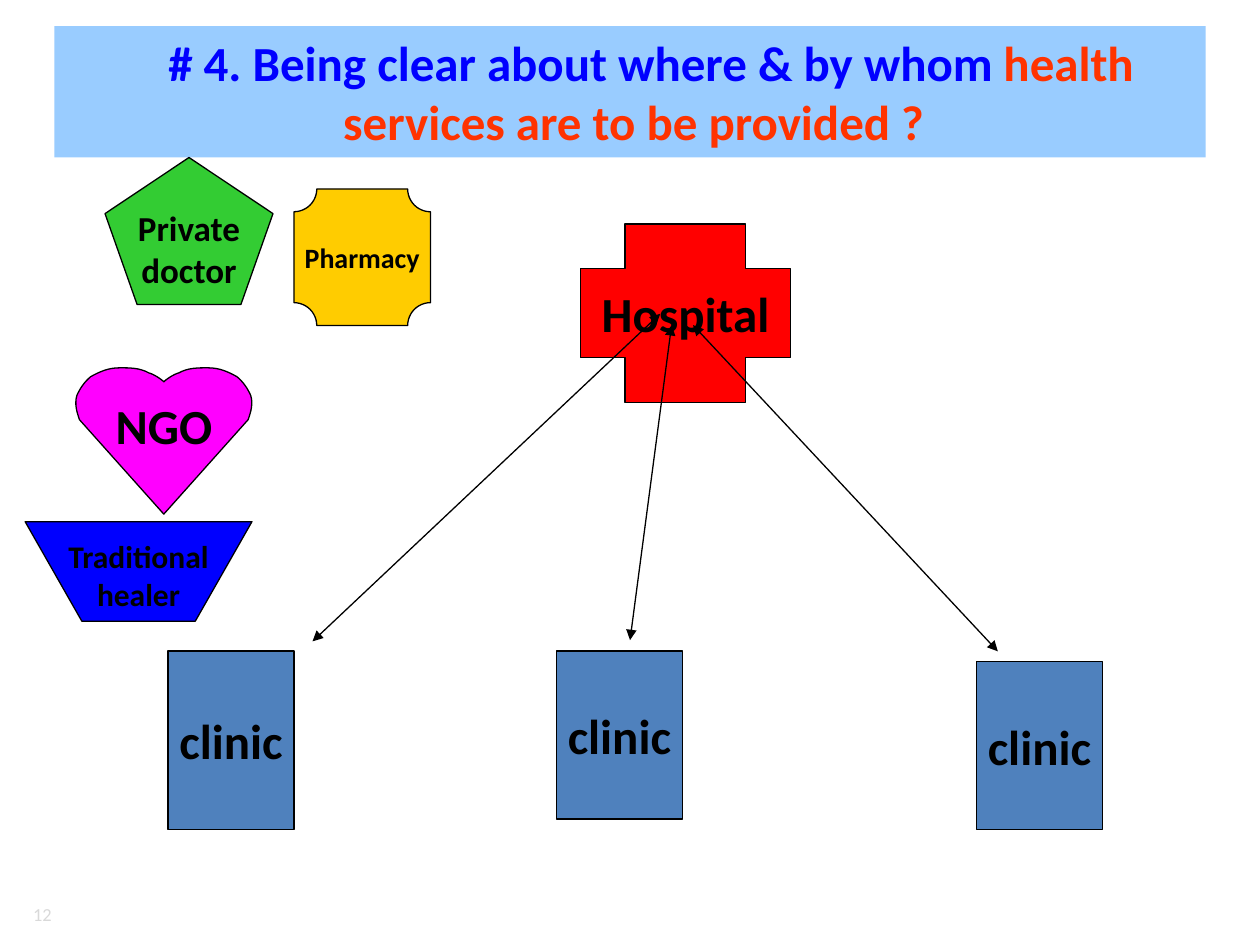
from pptx import Presentation
from pptx.dml.color import RGBColor as RGB
from pptx.enum.shapes import MSO_CONNECTOR as LINK, MSO_SHAPE as FORM
from pptx.enum.text import MSO_ANCHOR as ANCHOR, PP_ALIGN as ALIGN
from pptx.oxml.ns import qn
from pptx.util import Pt
from lxml.etree import SubElement as Sub

THEME = {
    "font": "Calibri", "black": "000000", "blue": "0000FF", "orange": "FF3300",
    "sky": "99CCFF", "steel": "4F81BD", "red": "FF0000", "green": "33CC33",
    "gold": "FFCC00", "pink": "FF00FF", "gray": "D9D9D9",
    "large": 28, "mid": 20, "small": 18, "tiny": 16, "foot": 10.5, "line": 0.75,
}

TITLE = [
    ("# 4. Being clear about where & by whom ", "blue"),
    ("health services are to be provided ?", "orange"),
]

CLINICS = [(96, 372, 72, 102), (318, 372, 72, 96), (558, 378, 72, 96)]
SHAPES = [
    (FORM.RECTANGLE, box, "steel", ["clinic"], "large", None) for box in CLINICS
] + [
    (FORM.CROSS, (331.7, 128, 120, 102), "red", ["Hospital"], "large", 0.25),
    (FORM.REGULAR_PENTAGON, (60, 90, 96, 84), "green",
     ["Private", "doctor"], "mid", None),
    (FORM.PLAQUE, (168, 108, 78, 78), "gold", ["Pharmacy"], "tiny", 0.167),
]

LINKS = [
    ((178.6, 366.5), (377.3, 179.3)),
    ((360, 365.8), (383.8, 185.8)),
    ((570.2, 372.2), (396, 185.8)),
]

HEART_MID = 93.6
HEART_TOP = (0, 218.2)
HEART_TIP = (0, 293.8)
HEART_SIDE = [
    ((1.4, 216.7), (5.8, 213.8), (8.6, 213.1)),
    ((13.7, 210.2), (19.4, 210.2), (25.2, 210.2)),
    ((31.7, 210.2), (36.7, 212.4), (41.8, 215.3)),
    ((45.4, 218.2), (48.2, 222.5), (49.7, 226.1)),
    ((51.1, 231.1), (49.7, 235.4), (48.2, 239.8)),
]
HEALER = [(14.4, 298.1), (46.8, 355), (111.6, 355), (144, 298.1)]


def color(name):
    return RGB.from_string(THEME[name])


def add_run(para, text, size, hue="black", bold=True):
    run = para.add_run()
    run.text = text
    font = run.font
    font.name, font.size, font.bold = THEME["font"], Pt(THEME[size]), bold
    font.color.rgb = color(hue)


def set_pad(frame, *pads):
    (frame.margin_left, frame.margin_top,
     frame.margin_right, frame.margin_bottom) = map(Pt, pads)


def dress(shape, fill, lines, size):
    shape.shadow.inherit = False
    shape.fill.solid()
    shape.fill.fore_color.rgb = color(fill)
    shape.line.color.rgb = color("black")
    shape.line.width = Pt(THEME["line"])
    frame = shape.text_frame
    frame.word_wrap = False
    frame.vertical_anchor = ANCHOR.MIDDLE
    for i, text in enumerate(lines):
        para = frame.add_paragraph() if i else frame.paragraphs[0]
        para.alignment = ALIGN.CENTER
        add_run(para, text, size)
    return shape


def draw(tree, dots):
    first, *rest = [(Pt(x), Pt(y)) for x, y in dots]
    pen = tree.build_freeform(*first)
    pen.add_line_segments(rest, close=True)
    return pen.convert_to_shape()


def curve(a, b, c, d, steps=8):
    for n in range(1, steps + 1):
        t = n / steps
        u = 1 - t
        yield tuple(
            u**3 * p + 3 * u * u * t * q + 3 * u * t * t * r + t**3 * s
            for p, q, r, s in zip(a, b, c, d)
        )


def heart_dots():
    side = [HEART_TOP]
    for part in HEART_SIDE:
        side.extend(curve(side[-1], *part))
    left = [(HEART_MID - x, y) for x, y in side + [HEART_TIP]]
    right = [(HEART_MID + x, y) for x, y in reversed(side[1:])]
    return left + right


def add_link(tree, start, end):
    link = tree.add_connector(LINK.STRAIGHT, *map(Pt, start + end))
    link.line.color.rgb = color("black")
    link.line.width = Pt(THEME["line"])
    edge = link.line._get_or_add_ln()
    for tag in ("a:headEnd", "a:tailEnd"):
        Sub(edge, qn(tag), type="triangle")
    Sub(link._element.spPr, qn("a:effectLst"))


def add_title(shape):
    shape.left, shape.top, shape.width, shape.height = map(Pt, (31, 15, 658, 75))
    shape.fill.solid()
    shape.fill.fore_color.rgb = color("sky")
    frame = shape.text_frame
    frame.word_wrap = True
    frame.vertical_anchor = ANCHOR.TOP
    set_pad(frame, 7.2, 3.6, 7.2, 3.6)
    para = frame.paragraphs[0]
    para.alignment = ALIGN.CENTER
    props = para._p.get_or_add_pPr()
    props.set("marL", str(Pt(4)))
    props.set("indent", str(Pt(20)))
    for text, hue in TITLE:
        add_run(para, text, "large", hue)


def add_number(tree, text):
    frame = tree.add_textbox(*map(Pt, (8.6, 514, 28, 17.3))).text_frame
    frame.word_wrap = True
    frame.vertical_anchor = ANCHOR.MIDDLE
    set_pad(frame, 0, 0, 7.2, 0)
    para = frame.paragraphs[0]
    para.alignment = ALIGN.RIGHT
    add_run(para, text, "foot", "gray", False)


def main():
    deck = Presentation()
    deck.slide_width, deck.slide_height = Pt(720), Pt(540)
    slide = deck.slides.add_slide(deck.slide_layouts[5])
    tree = slide.shapes
    add_title(tree.title)
    add_number(tree, "12")
    for form, box, fill, lines, size, bend in SHAPES:
        shape = tree.add_shape(form, *map(Pt, box))
        if bend:
            shape.adjustments[0] = bend
        dress(shape, fill, lines, size)
    heart = dress(draw(tree, heart_dots()), "pink", ["NGO"], "large")
    set_pad(heart.text_frame, 0, 0, 0, 18)
    for start, end in LINKS:
        add_link(tree, start, end)
    healer = dress(draw(tree, HEALER), "blue", ["Traditional", "healer"], "small")
    set_pad(healer.text_frame, 0, 4, 0, 0)
    deck.save("out.pptx")


if __name__ == "__main__":
    main()
